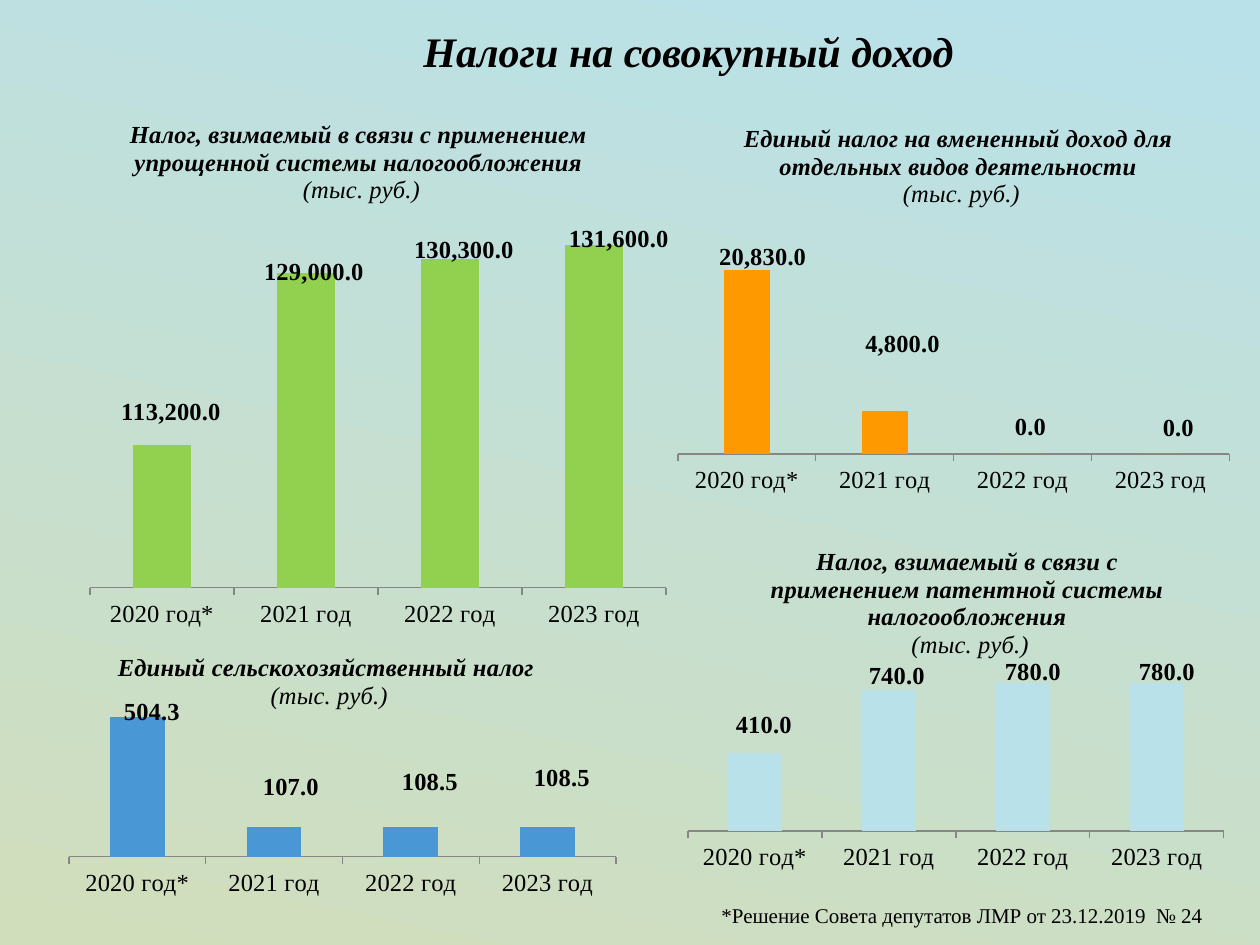
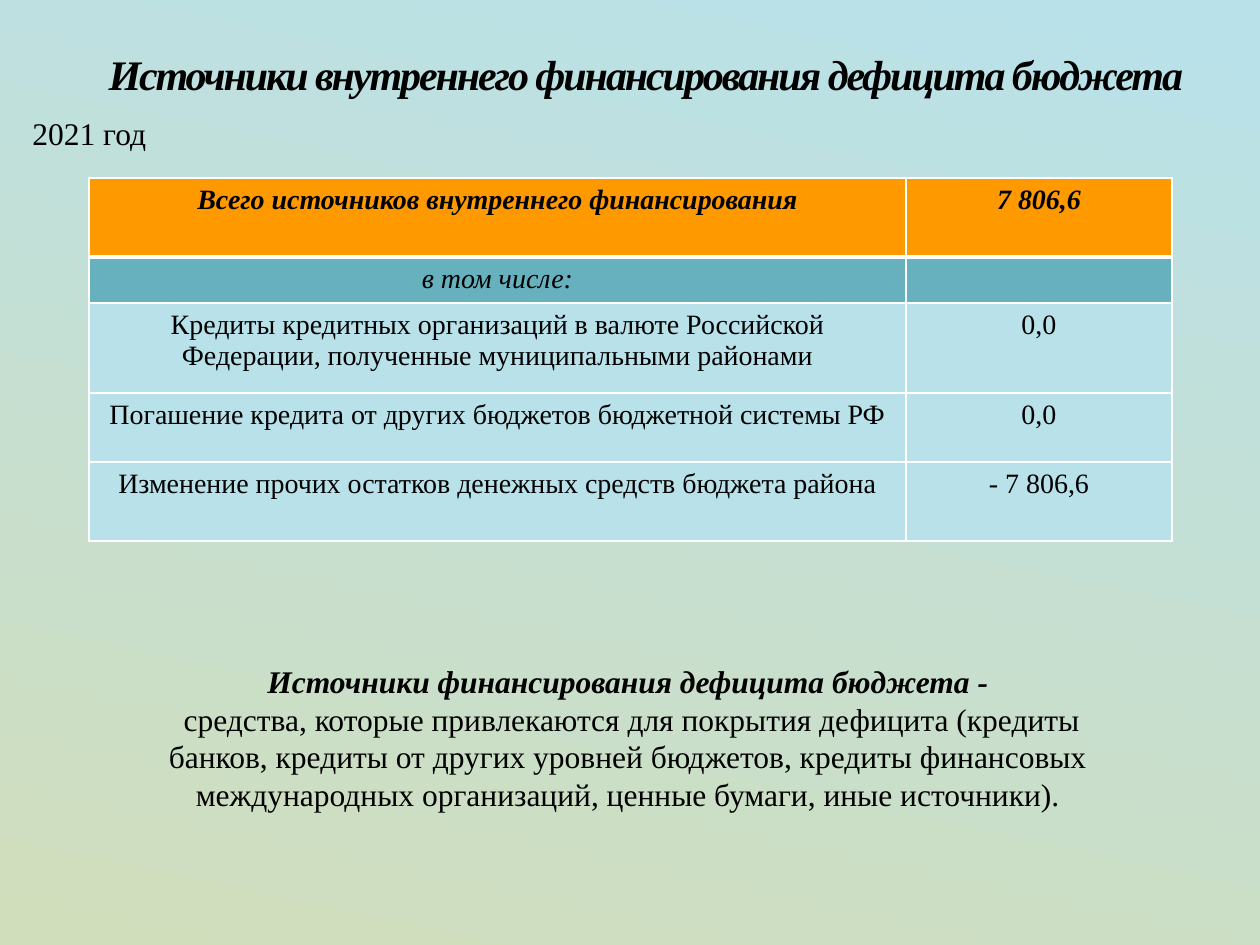
from lxml import etree
from pptx import Presentation
from pptx.chart.data import CategoryChartData
from pptx.dml.color import RGBColor
from pptx.enum.chart import XL_CHART_TYPE, XL_TICK_MARK
from pptx.enum.shapes import MSO_SHAPE
from pptx.enum.text import MSO_ANCHOR, PP_ALIGN
from pptx.oxml.ns import qn
from pptx.util import Emu, Pt

STACKED = XL_CHART_TYPE.COLUMN_STACKED
OUT, NONE = XL_TICK_MARK.OUTSIDE, XL_TICK_MARK.NONE
ROUND = MSO_SHAPE.ROUNDED_RECTANGLE
TOP, MIDDLE = MSO_ANCHOR.TOP, MSO_ANCHOR.MIDDLE
LEFT, CENTER = PP_ALIGN.LEFT, PP_ALIGN.CENTER

BLACK = RGBColor(0x00, 0x00, 0x00)
GRAY = RGBColor(0x86, 0x86, 0x86)
SKY = RGBColor(0xB9, 0xE1, 0xE9)
SAGE = RGBColor(0xD1, 0xDE, 0xBC)
ORANGE = RGBColor(0xFF, 0x99, 0x00)
GREEN = RGBColor(0x92, 0xD0, 0x50)
BLUE = RGBColor(0x4A, 0x97, 0xD6)
TEAL = RGBColor(0x66, 0xB1, 0xBD)
FONT = "Times New Roman"
NUMBER = "#,##0.0"
UNIT = "(тыс. руб.)"
YEARS = ["2020 год*", "2021 год", "2022 год", "2023 год"]
C15 = "http://schemas.microsoft.com/office/drawing/2012/chart"
EXT = "{CE6537A1-D6FC-4f65-9D91-7224C49458BB}"

TAXES = [
    dict(title="Единый налог на вмененный доход для отдельных видов деятельности",
         vals=[20830, 4800, 0, 0], color=ORANGE, gap=199, span=(0, 25000),
         box=(659, 98, 571, 473), plot=(678, 233, 552, 221), head=(740, 119),
         spots=[(763, 257), (903, 344), (1031, 427), (1179, 428)]),
    dict(title="Единый сельскохозяйственный налог",
         vals=[504.3, 107, 108.5, 108.5], color=BLUE, gap=150, span=(0, 600),
         box=(35, 619, 625, 315), plot=(69, 690, 547, 167), head=(114, 648),
         spots=[(152, 712), (291, 787), (430, 782), (562, 778)]),
    dict(title="Налог, взимаемый в связи с применением упрощенной системы налогообложения",
         vals=[113200, 129000, 130300, 131600], color=GREEN, gap=150, span=(100000, 135000),
         box=(78, 79, 591, 571), plot=(90, 208, 576, 380), head=(126, 115),
         spots=[(171, 412), (314, 272), (464, 250), (619, 239)]),
    dict(title="Налог, взимаемый в связи с применением патентной системы налогообложения",
         vals=[410, 740, 780, 780], color=SKY, gap=150, span=(0, 900),
         box=(669, 512, 556, 415), plot=(688, 660, 536, 171), head=(767, 542),
         spots=[(764, 725), (897, 676), (1033, 672), (1167, 672)]),
]

SOURCES = [
    ("Всего источников внутреннего финансирования", "7 806,6", 79, ORANGE, True, True),
    ("в том числе:", "", 46, TEAL, False, True),
    ("Кредиты кредитных организаций в валюте Российской Федерации, "
     "полученные муниципальными районами", "0,0", 90, SKY, False, False),
    ("Погашение кредита от других бюджетов бюджетной системы РФ", "0,0", 69, SKY, False, False),
    ("Изменение прочих остатков денежных средств бюджета района", "- 7 806,6", 79, SKY, False, False),
]
WIDTHS = (817, 266)

TERM = "Источники финансирования дефицита бюджета -"
MEANING = (" средства, которые привлекаются для покрытия дефицита (кредиты банков, "
           "кредиты от других уровней бюджетов, кредиты финансовых международных "
           "организаций, ценные бумаги, иные источники).")


def px(n):
    return Emu(round(n * 914400 / 126))


def rect(box):
    return [px(n) for n in box]


def style(font, size, bold=False, italic=False):
    font.name, font.size = FONT, Pt(size)
    font.bold, font.italic = bold, italic
    font.color.rgb = BLACK


def write(para, text, size, bold=False, italic=False, align=CENTER):
    para.text = text
    para.alignment = align
    for run in para.runs:
        style(run.font, size, bold, italic)


def start(deck, text, box):
    slide = deck.slides.add_slide(deck.slide_layouts[5])
    title = slide.shapes.title
    title.left, title.top, title.width, title.height = rect(box)
    frame = title.text_frame
    frame.word_wrap, frame.vertical_anchor = True, MIDDLE
    write(frame.paragraphs[0], text, 24, True, True)
    return slide


def note(slide, text, box, size):
    frame = slide.shapes.add_textbox(*rect(box)).text_frame
    frame.word_wrap = True
    write(frame.paragraphs[0], text, size, align=LEFT)


def place(node, index, **parts):
    layout = node.find(qn("c:layout"))
    if layout is None:
        layout = etree.Element(qn("c:layout"))
        node.insert(index, layout)
    for child in list(layout):
        layout.remove(child)
    manual = etree.SubElement(layout, qn("c:manualLayout"))
    for name, value in parts.items():
        etree.SubElement(manual, qn("c:" + name), val=str(value))


def set_spots(series, tax):
    left, top, wide, high = tax["plot"]
    low, peak = tax["span"]
    step = wide / len(YEARS)
    for i, (val, (x, y)) in enumerate(zip(tax["vals"], tax["spots"])):
        label = series.points[i].data_label
        style(label.font, 14, True)
        mid = top + high - high * (val - low) / (peak - low) / 2
        node = series.data_labels._element.findall(qn("c:dLbl"))[i]
        place(node, 1, x=(x - left - step * (i + 0.5)) / tax["box"][2],
              y=(y - mid) / tax["box"][3])
        form = etree.Element(qn("c:numFmt"), formatCode=NUMBER, sourceLinked="0")
        node.insert(2, form)


def hide_leads(labels):
    node = labels._element
    for lead in node.findall(qn("c:showLeaderLines")):
        lead.set("val", "0")
    exts = etree.SubElement(node, qn("c:extLst"))
    ext = etree.SubElement(exts, qn("c:ext"), uri=EXT)
    etree.SubElement(ext, f"{{{C15}}}showLeaderLines", nsmap={"c15": C15}, val="0")


def add_tax(slide, tax):
    data = CategoryChartData(number_format=NUMBER)
    data.categories = YEARS
    data.add_series("Series 1", tax["vals"])
    chart = slide.shapes.add_chart(STACKED, *rect(tax["box"]), data).chart
    chart.font.name, chart.font.size = "Calibri", Pt(18)
    chart.font.color.rgb = BLACK
    chart.has_legend = False

    x, y, wide, high = tax["box"]
    chart.has_title = True
    frame = chart.chart_title.text_frame
    write(frame.paragraphs[0], tax["title"], 14, True, True)
    write(frame.add_paragraph(), " " + UNIT, 14, italic=True)
    head = tax["head"]
    place(chart.chart_title._element, 1, xMode="edge", yMode="edge",
          x=(head[0] - x) / wide, y=(head[1] - y) / high)
    area = chart._chartSpace.find(".//" + qn("c:plotArea"))
    left, top, w, h = tax["plot"]
    place(area, 0, layoutTarget="inner", xMode="edge", yMode="edge",
          x=(left - x) / wide, y=(top - y) / high, w=w / wide, h=h / high)

    axis = chart.value_axis
    axis.minimum_scale, axis.maximum_scale = tax["span"]
    axis.has_major_gridlines = False
    axis.visible = False
    base = chart.category_axis
    base.major_tick_mark, base.minor_tick_mark = OUT, NONE
    base.format.line.color.rgb = GRAY
    base.format.line.width = Pt(0.75)
    style(base.tick_labels.font, 14)

    plot = chart.plots[0]
    plot.gap_width, plot.overlap = tax["gap"], 100
    plot.vary_by_categories = False
    series = plot.series[0]
    series.format.fill.solid()
    series.format.fill.fore_color.rgb = tax["color"]
    labels = series.data_labels
    labels.show_value = True
    labels.number_format, labels.number_format_is_linked = NUMBER, False
    style(labels.font, 14, True)
    set_spots(series, tax)
    hide_leads(labels)


def edge(cell, widths):
    props = cell._tc.get_or_add_tcPr()
    for i, (side, width) in enumerate(widths.items()):
        line = etree.Element(qn("a:ln" + side), w=str(Pt(width)))
        fill = etree.SubElement(line, qn("a:solidFill"))
        etree.SubElement(fill, qn("a:srgbClr"), val="FFFFFF")
        props.insert(i, line)


def add_sources(slide):
    high = sum(row[2] for row in SOURCES)
    box = (89, 178, sum(WIDTHS), high)
    table = slide.shapes.add_table(len(SOURCES), len(WIDTHS), *rect(box)).table
    for col, width in zip(table.columns, WIDTHS):
        col.width = px(width)
    for r, (name, total, tall, color, bold, italic) in enumerate(SOURCES):
        table.rows[r].height = px(tall)
        for c, text in enumerate((name, total)):
            cell = table.cell(r, c)
            para = cell.text_frame.paragraphs[0]
            write(para, text, 16, bold, italic)
            if not text:
                etree.SubElement(para._p, qn("a:endParaRPr"), sz="1600")
            cell.fill.solid()
            cell.fill.fore_color.rgb = color
            edge(cell, {"L": 1, "R": 1, "T": 3 if r == 1 else 1, "B": 3 if r == 0 else 1})


def add_term(slide):
    shape = slide.shapes.add_shape(ROUND, *rect((124, 649, 1008, 227)))
    shape.adjustments[0] = 0.1
    shape.shadow.inherit = False
    shape.fill.background()
    shape.line.fill.background()
    frame = shape.text_frame
    frame.word_wrap, frame.vertical_anchor = True, TOP
    write(frame.paragraphs[0], TERM, 18, True, True)
    write(frame.add_paragraph(), MEANING, 18)


def main():
    deck = Presentation()
    deck.slide_width, deck.slide_height = px(1260), px(945)
    fill = deck.slide_master.background.fill
    fill.gradient()
    fill.gradient_angle = 258
    for stop, (spot, color) in zip(fill.gradient_stops, [(0.02, SKY), (1, SAGE)]):
        stop.position = spot
        stop.color.rgb = color

    taxes = start(deck, "Налоги на совокупный доход", (344, 19, 689, 63))
    for tax in TAXES:
        add_tax(taxes, tax)
    note(taxes, "*Решение Совета депутатов ЛМР от 23.12.2019  № 24", (709, 896, 522, 38), 12)

    funds = start(deck, "Источники внутреннего финансирования дефицита бюджета", (35, 36, 1221, 82))
    para = funds.shapes.title.text_frame.paragraphs[0]
    para.line_spacing = 0.9
    para.runs[0].font._element.set("spc", "-120")
    note(funds, "2021 год", (20, 108, 158, 50), 18)
    add_sources(funds)
    add_term(funds)
    deck.save("out.pptx")


if __name__ == "__main__":
    main()
